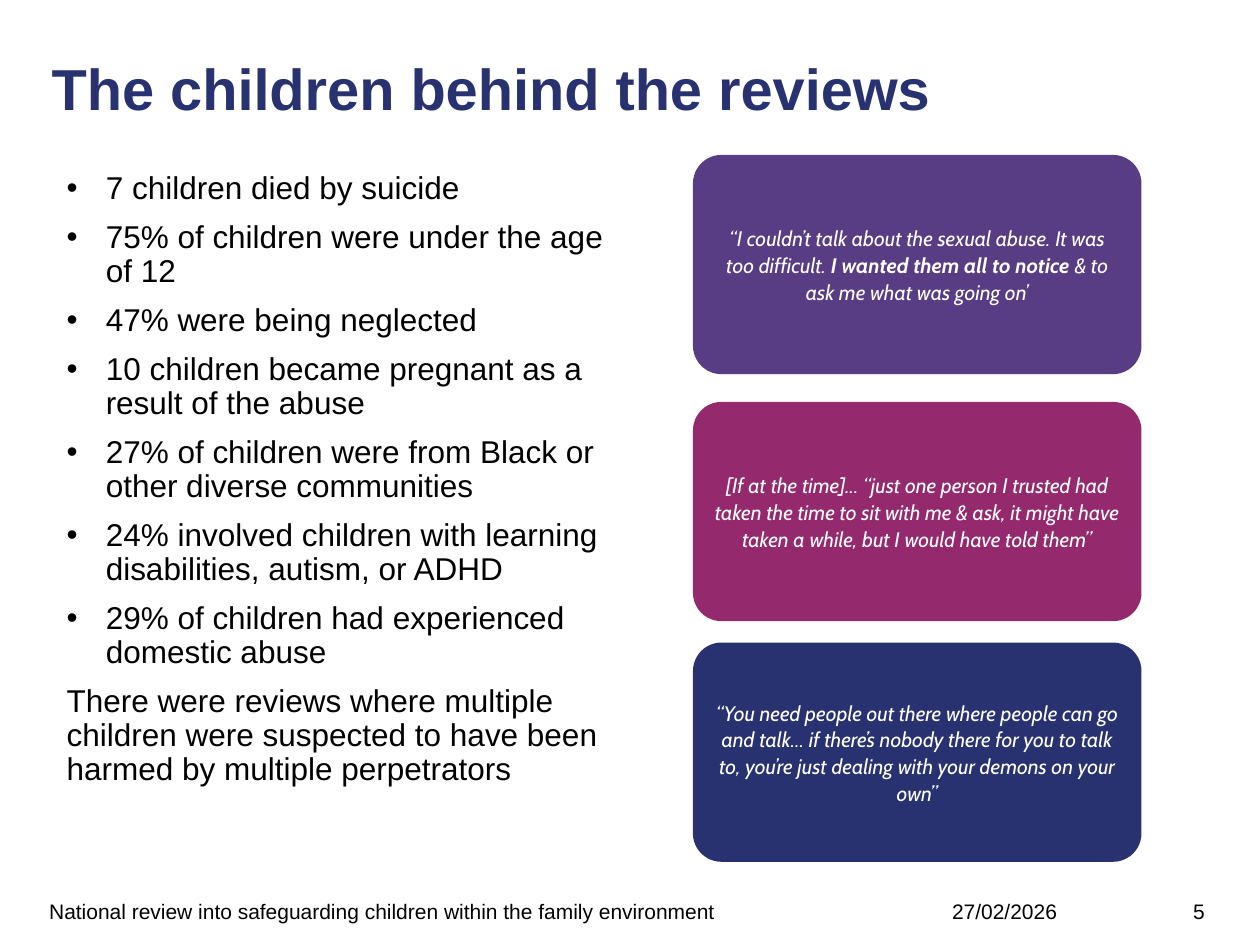
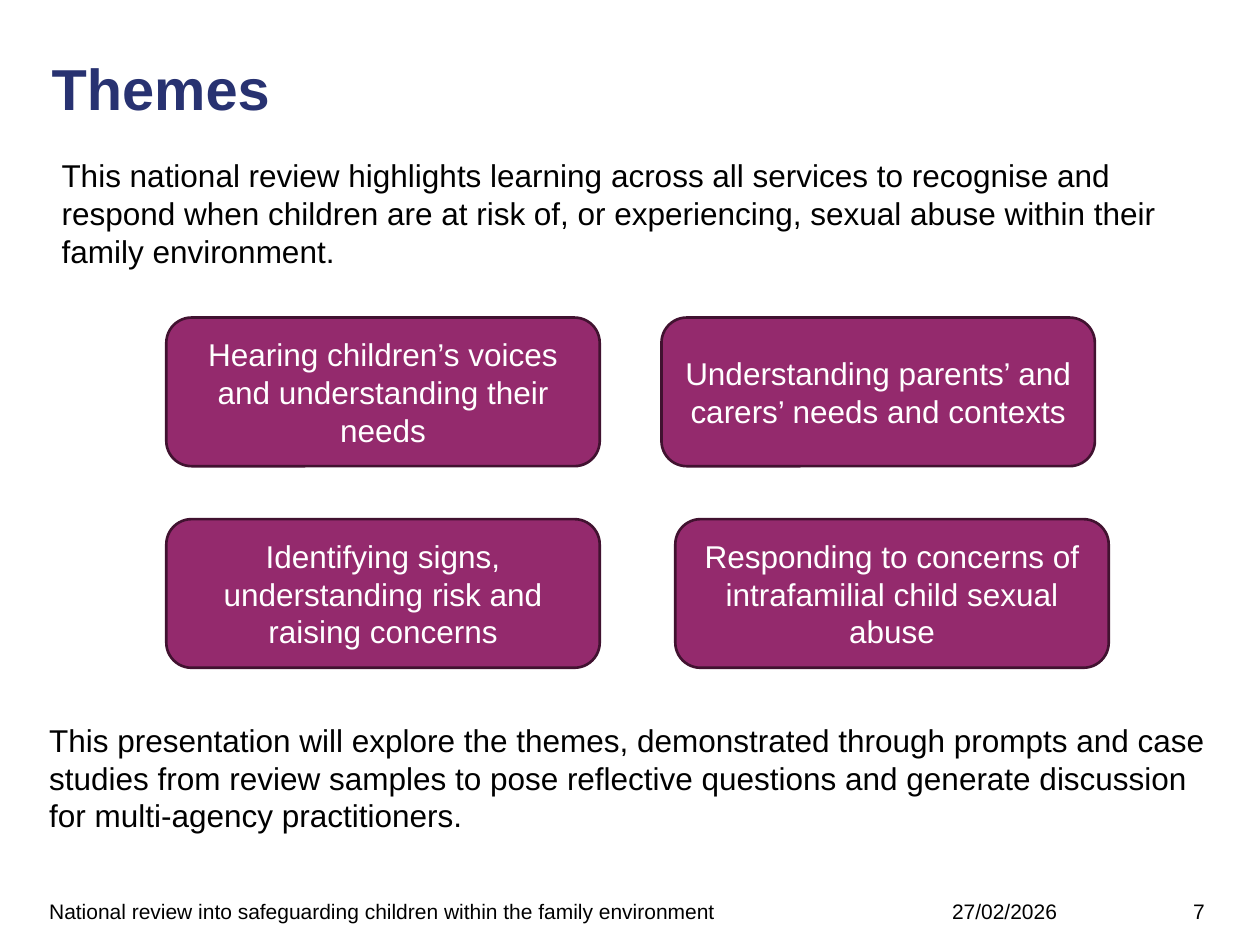
"""Build two slides on the national review: the children and the themes."""
from dataclasses import dataclass

from lxml.etree import SubElement
from pptx import Presentation
from pptx.dml.color import RGBColor
from pptx.enum.shapes import MSO_SHAPE as Preset
from pptx.enum.text import MSO_ANCHOR as Anchor, PP_ALIGN as Align
from pptx.oxml.ns import qn
from pptx.util import Inches, Pt

NAVY = RGBColor(0x28, 0x32, 0x71)
PURPLE = RGBColor(0x58, 0x3C, 0x84)
PLUM = RGBColor(0x94, 0x2A, 0x6D)
DARK_PLUM = RGBColor(0x41, 0x12, 0x30)
BLACK = RGBColor(0, 0, 0)
WHITE = RGBColor(0xFF, 0xFF, 0xFF)

BULLET_INDENT = Inches(0.31)
REVIEW = "National review into safeguarding children within the family environment"
REVIEW_DATE = "27/02/2026"

TITLE_FONT = {"name": "Arial", "size": Pt(33), "bold": True}
BODY_FONT = {"name": "Arial", "size": Pt(18)}
FOOTER_FONT = {"name": "Arial", "size": Pt(12)}
QUOTE_FONT = {"name": "Cabin", "size": Pt(12), "italic": True}

TIGHT = {"line_spacing": 0.9}
SPACED = {"space_after": Pt(8.5)}
CENTRED = {"alignment": Align.CENTER}
QUOTE_LINES = {"alignment": Align.CENTER, "line_spacing": 1.07}
NO_INSETS = dict.fromkeys(
    ("margin_left", "margin_top", "margin_right", "margin_bottom"), 0)


@dataclass(frozen=True)
class Area:
    """Position and size in inches."""
    left: float
    top: float
    width: float
    height: float

    def lengths(self) -> tuple:
        """Return the four values as lengths."""
        return tuple(map(Inches, (self.left, self.top, self.width, self.height)))


@dataclass(frozen=True)
class Wording:
    """A paragraph whose text between asterisks is bold."""
    text: str
    bulleted: bool = False


@dataclass(frozen=True)
class Style:
    """Font, colour and paragraph format of a text."""
    font: dict
    colour: RGBColor
    paragraph: dict


@dataclass(frozen=True)
class Card:
    """A rounded panel with centred text."""
    area: Area
    text: str
    fill: RGBColor
    style: Style
    outline: RGBColor | None = None
    rounding: float = 0.17


TITLE = Style(TITLE_FONT, NAVY, TIGHT)
FINDING = Style(BODY_FONT, BLACK, TIGHT | SPACED)
PROSE = Style(BODY_FONT, BLACK, SPACED)
INTRO = Style(BODY_FONT, BLACK, {})
FOOTER = Style(FOOTER_FONT, BLACK, {})
FOOTER_DATE = Style(FOOTER_FONT, BLACK, {"alignment": Align.RIGHT})
QUOTE = Style(QUOTE_FONT, WHITE, QUOTE_LINES)
THEME = Style(BODY_FONT, WHITE, CENTRED)

FINDINGS = (
    "7 children died by suicide",
    "75% of children were under the age of 12",
    "47% were being neglected",
    "10 children became pregnant as a result of the abuse",
    "27% of children were from Black or other diverse communities",
    "24% involved children with learning disabilities, autism, or ADHD",
    "29% of children had experienced domestic abuse",
)
PERPETRATORS = ("There were reviews where multiple children were suspected to have "
                "been harmed by multiple perpetrators")
QUOTES = (
    (1.23, PURPLE, "‘‘I couldn’t talk about the sexual abuse. It was too difficult. "
                   "*I wanted them all to notice* & to ask me what was going on’"),
    (3.19, PLUM, "[If at the time]... “just one person I trusted had taken the time to "
                 "sit with me & ask, it might have taken a while, but I would have told "
                 "them”"),
    (5.10, NAVY, "“You need people out there where people can go and talk… if there’s "
                 "nobody there for you to talk to, you’re just dealing with your demons "
                 "on your own”"),
)
THEMES = (
    (1.32, 2.52, "Hearing children’s voices and understanding their needs"),
    (5.25, 2.52, "Understanding parents’ and carers’ needs and contexts"),
    (1.32, 4.12, "Identifying signs, understanding risk and raising concerns"),
    (5.36, 4.12, "Responding to concerns of intrafamilial child sexual abuse"),
)
THEMES_INTRO = ("This national review highlights learning across all services to recognise "
                "and respond when children are at risk of, or experiencing, sexual abuse "
                "within their family environment.")
THEMES_OUTLOOK = ("This presentation will explore the themes, demonstrated through prompts "
                  "and case studies from review samples to pose reflective questions and "
                  "generate discussion for multi-agency practitioners.")


def apply(target, values: dict) -> None:
    """Set each named attribute on the target."""
    for name, value in values.items():
        setattr(target, name, value)


def add_bullet(paragraph) -> None:
    """Give a paragraph a hanging bullet."""
    properties = paragraph._p.get_or_add_pPr()
    properties.set("marL", str(BULLET_INDENT))
    properties.set("indent", str(-BULLET_INDENT))
    SubElement(properties, qn("a:buFont"), typeface="Arial")
    SubElement(properties, qn("a:buChar"), char="•")


def write(frame, wordings: list[Wording], style: Style) -> None:
    """Fill a text frame with styled paragraphs."""
    frame.word_wrap = True
    for index, wording in enumerate(wordings):
        paragraph = frame.add_paragraph() if index else frame.paragraphs[0]
        if wording.bulleted:
            add_bullet(paragraph)
        apply(paragraph, style.paragraph)
        for part, text in enumerate(wording.text.split("*")):
            run = paragraph.add_run()
            run.text = text
            apply(run.font, style.font)
            run.font.color.rgb = style.colour
            if part % 2:
                run.font.bold = True


def add_text(slide, area: Area, wordings: list[Wording], style: Style,
             layout: dict = NO_INSETS) -> None:
    """Add a text box with the given frame layout."""
    frame = slide.shapes.add_textbox(*area.lengths()).text_frame
    apply(frame, layout)
    write(frame, wordings, style)


def add_card(slide, card: Card) -> None:
    """Draw a rounded card."""
    panel = slide.shapes.add_shape(Preset.ROUNDED_RECTANGLE, *card.area.lengths())
    panel.adjustments[0] = card.rounding
    panel.shadow.inherit = False
    panel.fill.solid()
    panel.fill.fore_color.rgb = card.fill
    if card.outline is None:
        panel.line.fill.background()
    else:
        panel.line.color.rgb = card.outline
        panel.line.width = Pt(1.5)
    panel.text_frame.vertical_anchor = Anchor.MIDDLE
    write(panel.text_frame, [Wording(card.text)], card.style)


def add_review_slide(deck, title: str, number: int):
    """Add a slide with the shared title and footer."""
    slide = deck.slides.add_slide(deck.slide_layouts[6])
    add_text(slide, Area(0.41, 0.48, 9.19, 0.6), [Wording(title)], TITLE)
    footer = ((0.39, 5.91, REVIEW, FOOTER), (6.42, 1.97, REVIEW_DATE, FOOTER_DATE),
              (9.47, 0.39, str(number), FOOTER))
    for left, width, text, style in footer:
        add_text(slide, Area(left, 7.13, width, 0.2), [Wording(text)], style,
                 NO_INSETS | {"vertical_anchor": Anchor.MIDDLE})
    return slide


def add_children(deck) -> None:
    """Add the findings and the children's quotes."""
    slide = add_review_slide(deck, "The children behind the reviews", 5)
    findings = [Wording(finding, bulleted=True) for finding in FINDINGS]
    add_text(slide, Area(0.53, 1.37, 4.47, 5.34),
             findings + [Wording(PERPETRATORS)], FINDING)
    for top, fill, quote in QUOTES:
        add_card(slide, Card(Area(5.5, top, 3.56, 1.74), quote, fill, QUOTE,
                             rounding=0.13))


def add_themes(deck) -> None:
    """Add the four themes with their introduction and outlook."""
    slide = add_review_slide(deck, "Themes", 7)
    add_text(slide, Area(0.39, 5.72, 9.19, 1.18), [Wording(THEMES_OUTLOOK)], PROSE)
    for left, top, theme in THEMES:
        add_card(slide, Card(Area(left, top, 3.44, 1.18), theme, PLUM, THEME, DARK_PLUM))
    add_text(slide, Area(0.39, 1.19, 9.28, 1.01), [Wording(THEMES_INTRO)], INTRO, {})


def main() -> None:
    """Build and save the presentation."""
    deck = Presentation()
    deck.slide_width, deck.slide_height = Inches(10), Inches(7.5)
    add_children(deck)
    add_themes(deck)
    deck.save("out.pptx")


if __name__ == "__main__":
    main()
